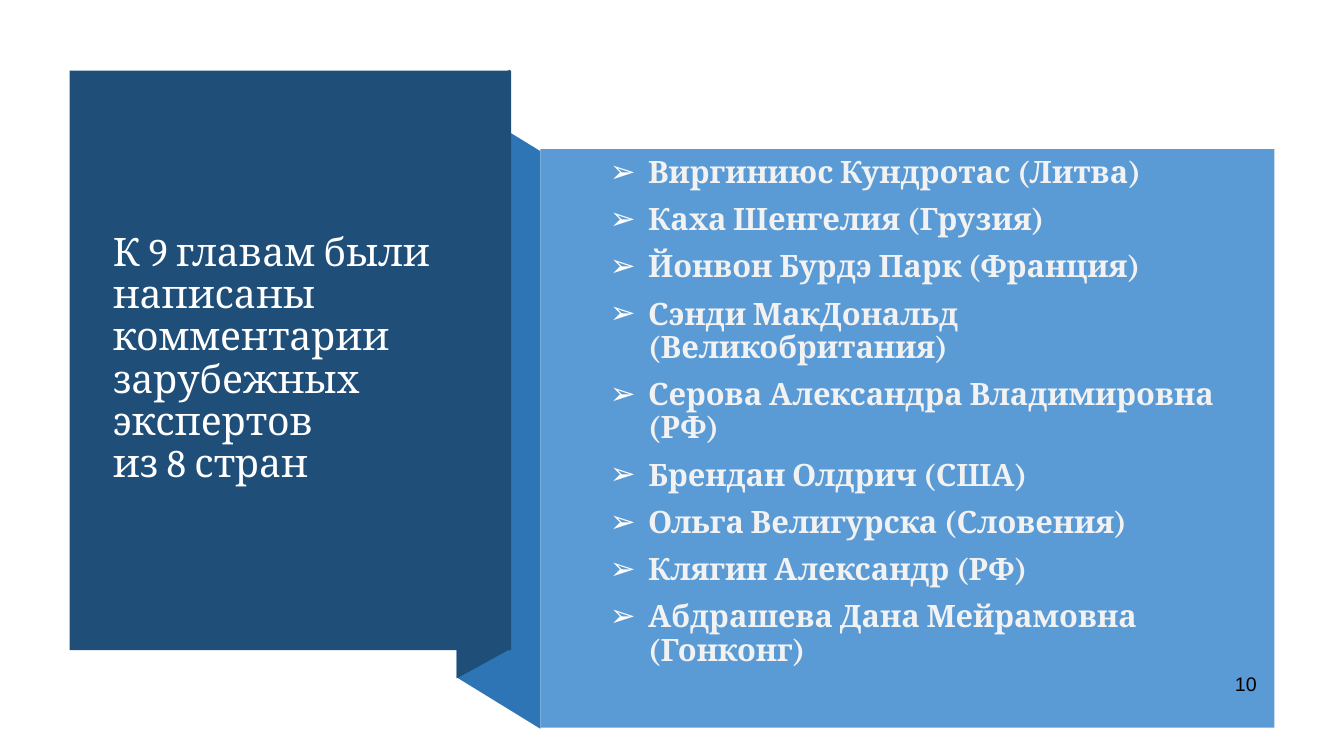
from collections import namedtuple
from dataclasses import dataclass

from lxml import etree
from pptx import Presentation
from pptx.dml.color import RGBColor
from pptx.enum.shapes import MSO_SHAPE
from pptx.enum.text import MSO_ANCHOR
from pptx.oxml.ns import qn
from pptx.util import Inches, Pt

RECTANGLE = MSO_SHAPE.RECTANGLE
TOP = MSO_ANCHOR.TOP
MIDDLE = MSO_ANCHOR.MIDDLE

Box = namedtuple("Box", "left top width height")


@dataclass(frozen=True)
class Theme:
    navy: str = "1F4E79"
    fold: str = "2E75B6"
    panel: str = "5B9BD5"
    white: str = "FFFFFF"
    soft_white: str = "F2F2F2"
    black: str = "000000"
    serif: str = "Cambria"
    sans: str = "Arial"
    title_size: int = 28
    list_size: int = 22
    number_size: int = 14


THEME = Theme()
TITLE = "К 9 главам были написаны комментарии зарубежных экспертов \vиз 8 стран"
EXPERTS = [
    "Виргиниюс Кундротас (Литва)",
    "Каха Шенгелия (Грузия)",
    "Йонвон Бурдэ Парк (Франция)",
    "Сэнди МакДональд (Великобритания)",
    "Серова Александра Владимировна (РФ)",
    "Брендан Олдрич (США)",
    "Ольга Велигурска (Словения)",
    "Клягин Александр (РФ)",
    "Абдрашева Дана Мейрамовна (Гонконг)",
]


def paint(shape, color):
    shape.shadow.inherit = False
    shape.fill.solid()
    shape.fill.fore_color.rgb = RGBColor.from_string(color)
    shape.line.fill.background()


def add_panel(page, box, color):
    panel = page.shapes.add_shape(RECTANGLE, *map(Inches, box))
    paint(panel, color)


def add_outline(page, points, color):
    corners = [(Inches(x), Inches(y)) for x, y in points]
    builder = page.shapes.build_freeform(*corners[0])
    builder.add_line_segments(corners[1:], close=True)
    paint(builder.convert_to_shape(), color)


def add_bullet(para):
    properties = para._p.get_or_add_pPr()
    properties.set("marL", str(Inches(0.62)))
    properties.set("indent", str(Inches(-0.38)))
    bullet_color = etree.SubElement(properties, qn("a:buClr"))
    etree.SubElement(bullet_color, qn("a:srgbClr"), val=THEME.white)
    etree.SubElement(properties, qn("a:buFont"), typeface=THEME.sans)
    etree.SubElement(properties, qn("a:buChar"), char="➢")


def add_text(page, box, *lines, font, size, color, bold=False, bullet=False,
             anchor=TOP, wrap=True, spacing=1.0, gap=0):
    frame = page.shapes.add_textbox(*map(Inches, box)).text_frame
    frame.word_wrap = wrap
    frame.vertical_anchor = anchor
    for index, line in enumerate(lines):
        para = frame.add_paragraph() if index else frame.paragraphs[0]
        para.text = line
        para.line_spacing = spacing
        if index:
            para.space_before = Pt(gap)
        if bullet:
            add_bullet(para)
        for span in para.runs:
            span.font.name = font
            span.font.size = Pt(size)
            span.font.bold = bold
            span.font.color.rgb = RGBColor.from_string(color)


def add_ribbon(page, box):
    left, top, width, height = box
    right, bottom = left + width, top + height
    add_outline(page, [(right, bottom), (left, bottom - 0.51),
                       (left, top), (right, top + 0.51)], THEME.fold)
    edge = left + 0.53
    add_outline(page, [(edge, bottom - 0.79), (left, bottom - 0.5),
                       (left, top), (edge, top - 0.3)], THEME.navy)


def add_title_panel(page, box):
    add_panel(page, box, THEME.navy)
    title_box = Box(box.left + 0.33, box.top + 0.37, box.width - 0.66, box.height - 0.76)
    add_text(page, title_box, TITLE, font=THEME.serif, size=THEME.title_size,
             color=THEME.white, anchor=MIDDLE, spacing=0.9)


def add_expert_panel(page, box):
    add_panel(page, box, THEME.panel)
    list_box = Box(box.left + 0.35, box.top + 0.24, box.width - 0.35, 4.74)
    add_text(page, list_box, *EXPERTS, font=THEME.serif, size=THEME.list_size,
             color=THEME.soft_white, bold=True, bullet=True, anchor=MIDDLE,
             spacing=0.9, gap=10)
    number_box = Box(box.left + box.width - 0.49, box.top + box.height - 0.6, 0.42, 0.34)
    add_text(page, number_box, "10", font=THEME.sans, size=THEME.number_size,
             color=THEME.black, wrap=False)


def main():
    deck = Presentation()
    deck.slide_width, deck.slide_height = Inches(13.33), Inches(7.5)
    page = deck.slides.add_slide(deck.slide_layouts[6])
    add_ribbon(page, Box(4.53, 0.99, 0.83, 6.24))
    add_title_panel(page, Box(0.69, 0.7, 4.38, 5.75))
    add_expert_panel(page, Box(5.36, 1.48, 7.28, 5.74))
    deck.save("out.pptx")


if __name__ == "__main__":
    main()
